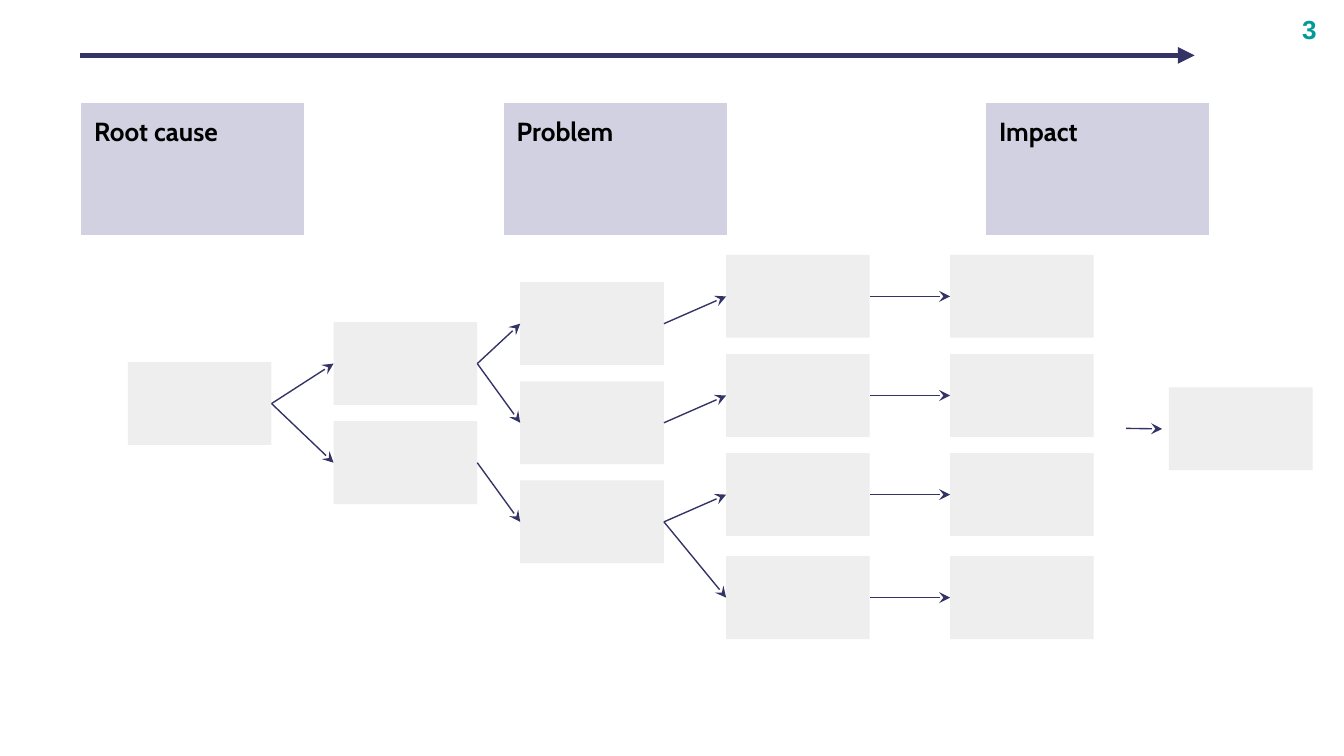
from typing import NamedTuple

from lxml.etree import SubElement
from pptx import Presentation
from pptx.dml.color import RGBColor
from pptx.enum.shapes import MSO_CONNECTOR, MSO_SHAPE
from pptx.enum.text import MSO_ANCHOR
from pptx.oxml import parse_xml
from pptx.oxml.ns import nsdecls, qn
from pptx.util import Pt

NAVY, TEAL, BLACK = "333366", "009B99", "000000"
LILAC, GREY, WHITE = "D1D1E1", "EEEEEE", "FFFFFF"
WIDE, HIGH, STEP = 77, 44.4, 53.1
LEFT, RIGHT = 1, 3


class Head(NamedTuple):
    text: str
    left: float


class Stack(NamedTuple):
    left: float
    tops: list[float]


class Link(NamedTuple):
    stack: int
    row: int
    goal: int


def rows(top: float, count: int) -> list[float]:
    return [top + STEP * row for row in range(count)]


LONG = rows(136.6, 3) + [298]
HEADS = [Head("Root cause", 43.2), Head("Problem", 269.6), Head("Impact", 528)]
STACKS = [
    Stack(68.5, rows(194, 1)),
    Stack(178.7, rows(172.6, 2)),
    Stack(278.7, rows(151.2, 3)),
    Stack(389, LONG),
    Stack(509, LONG),
    Stack(626.2, rows(207.5, 1)),
]
LINKS = [
    Link(0, 0, 0), Link(0, 0, 1),
    Link(1, 0, 0), Link(1, 0, 1), Link(1, 1, 2),
    Link(2, 0, 0), Link(2, 1, 1), Link(2, 2, 2), Link(2, 2, 3),
    *(Link(3, row, row) for row in range(4)),
]


def paint(part, tone: str) -> None:
    part.solid()
    part.fore_color.rgb = RGBColor.from_string(tone)


def write(frame, text: str, face: str, tone: str) -> None:
    run = frame.paragraphs[0].add_run()
    run.text = text
    run.font.name = face
    run.font.size = Pt(14)
    run.font.bold = True
    paint(run.font.fill, tone)


def pad(part) -> None:
    part.margin_left = part.margin_right = Pt(7.2)
    part.margin_top = part.margin_bottom = Pt(7.2)


def add_head(slide, head: Head) -> None:
    frame = slide.shapes.add_table(1, 1, Pt(head.left), Pt(55), Pt(120), Pt(71))
    table = frame.table
    table.first_row = table.horz_banding = False
    cell = table.cell(0, 0)
    pad(cell)
    paint(cell.fill, LILAC)
    write(cell.text_frame, head.text, "Cabin", BLACK)
    props = cell._tc.get_or_add_tcPr()
    for spot, side in enumerate(("lnL", "lnR", "lnT", "lnB")):
        edge = parse_xml(
            f'<a:{side} {nsdecls("a")} w="{Pt(0.75)}"><a:solidFill>'
            f'<a:srgbClr val="{WHITE}"/></a:solidFill></a:{side}>'
        )
        props.insert(spot, edge)


def add_box(slide, left: float, top: float):
    box = slide.shapes.add_shape(
        MSO_SHAPE.RECTANGLE, Pt(left), Pt(top), Pt(WIDE), Pt(HIGH)
    )
    box.shadow.inherit = False
    paint(box.fill, GREY)
    box.line.fill.background()
    return box


def add_arrow(slide, start: tuple[float, float], end: tuple[float, float],
              width: float = 0.75, tip: str = "stealth"):
    arrow = slide.shapes.add_connector(
        MSO_CONNECTOR.STRAIGHT, *(Pt(spot) for spot in (*start, *end))
    )
    arrow.line.width = Pt(width)
    paint(arrow.line.fill, NAVY)
    SubElement(arrow.line._get_or_add_ln(), qn("a:tailEnd"), type=tip)
    SubElement(arrow._element.spPr, qn("a:effectLst"))
    return arrow


def add_page(slide, text: str) -> None:
    box = slide.shapes.add_textbox(Pt(690.5), Pt(0), Pt(43), Pt(31))
    frame = box.text_frame
    frame.word_wrap = True
    frame.vertical_anchor = MSO_ANCHOR.MIDDLE
    pad(frame)
    write(frame, text, "Arial", TEAL)


def main() -> None:
    deck = Presentation()
    deck.slide_width, deck.slide_height = Pt(720), Pt(405)
    slide = deck.slides.add_slide(deck.slide_layouts[6])
    add_page(slide, "3")
    add_arrow(slide, (43, 29.7), (640, 29.7), 3, "triangle")
    for head in HEADS:
        add_head(slide, head)
    boxes = [[add_box(slide, stack.left, top) for top in stack.tops]
             for stack in STACKS]
    for link in LINKS:
        arrow = add_arrow(slide, (0, 0), (0, 0))
        arrow.begin_connect(boxes[link.stack][link.row], RIGHT)
        arrow.end_connect(boxes[link.stack + 1][link.goal], LEFT)
    add_arrow(slide, (603.3, 229.5), (622.6, 229.8))
    deck.save("out.pptx")


if __name__ == "__main__":
    main()
